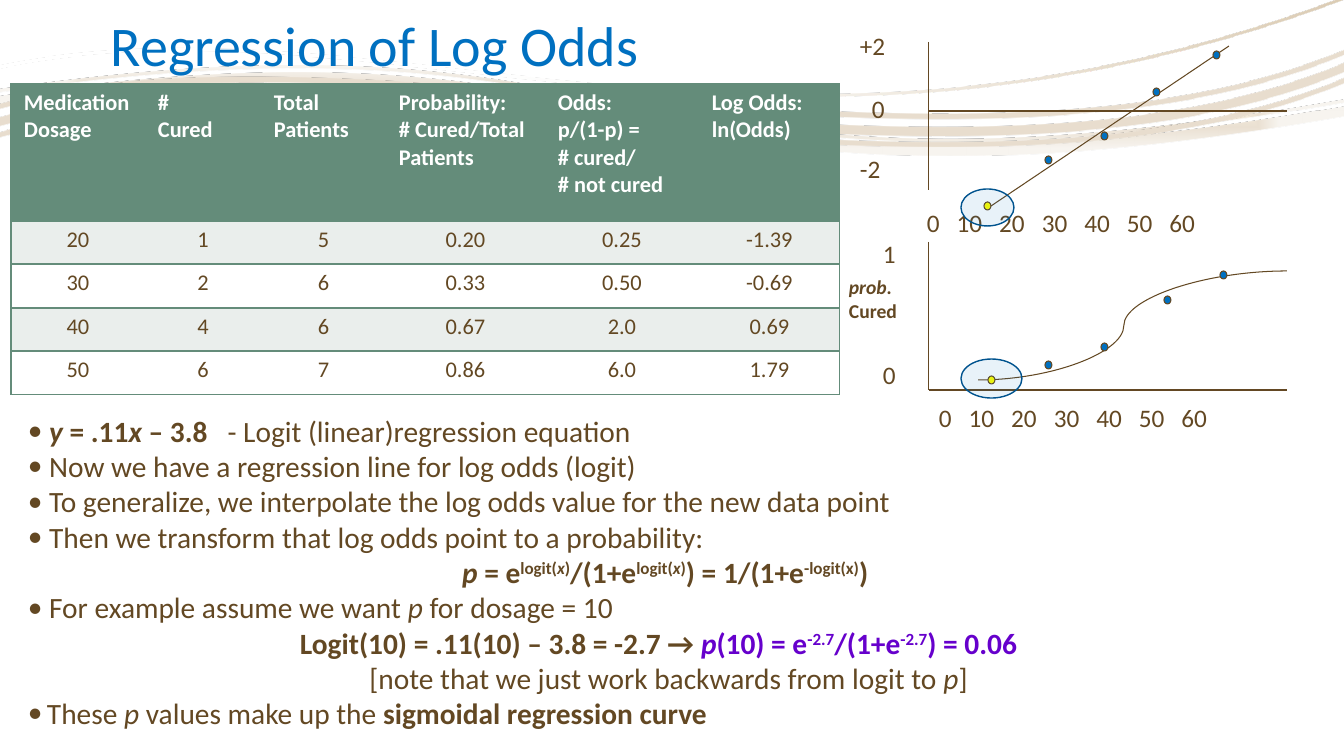
import math
import lxml.etree
import pptx
import pptx.dml.color
import pptx.enum.shapes
import pptx.enum.text
import pptx.oxml
import pptx.oxml.ns
import pptx.util

PX = 9072
BROWN, BLUE, GREEN, WHITE = "634823", "0070C0", "648C7A", "FFFFFF"
VIOLET, YELLOW, NAVY, PALE = "6600CC", "FFFF00", "00538E", "EAEEEC"
CENTER = pptx.enum.text.PP_ALIGN.CENTER
DRAWING = 'xmlns:a="http://schemas.openxmlformats.org/drawingml/2006/main"'
qn = pptx.oxml.ns.qn
rgb = pptx.dml.color.RGBColor.from_string


def write(frame, lines, size, color=BROWN, align=None):
    frame.word_wrap = True
    for number, line in enumerate(lines):
        para = frame.paragraphs[0] if number == 0 else frame.add_paragraph()
        para.alignment = align
        for text, marks in line:
            span = para.add_run()
            span.text = text
            look = {"name": "Calibri", "size": pptx.util.Pt(size),
                    "bold": "b" in marks, "italic": "i" in marks}
            for name, value in look.items():
                setattr(span.font, name, value)
            span.font.color.rgb = rgb(VIOLET if "v" in marks else color)
            if "^" in marks:
                span.font._element.set("baseline", "30000")


deck = pptx.Presentation()
deck.slide_width, deck.slide_height = 1344 * PX, 756 * PX
page = deck.slides.add_slide(deck.slide_layouts[6])
shapes = page.shapes

center_focus = '<a:path path="shape"><a:fillToRect l="50000" t="50000" r="50000" b="50000"/></a:path>'
corner_focus = '<a:path path="rect"><a:fillToRect l="100000" t="100000"/></a:path>'
waves = [
    ((1, 39, 1342, 136), [(1344, 106), (607, 235), (672, 0), (0, 96)], [(0, 10), (-7, 3)],
     [(0, "FAF1DF", 90), (18, "EAE0D2", 100), (37, "F7F4EF", 100), (100, "F7F4EF", 100)],
     center_focus),
    ((3, 15, 1346, 172), [(1344, -3), (760, 213), (376, -14), (0, 65)], [(0, 3)],
     [(36, WHITE, 30), (100, "CBB491", 100)], '<a:lin ang="2700000" scaled="0"/>'),
    ((-1, 51, 1347, 116), [(1344, 63), (963, 222), (352, 22), (0, 117)],
     [(15, 5), (0, 9), (-13, 5)],
     [(36, WHITE, 47), (100, "E8DDCE", 100)], corner_focus),
]
TILT = 3.5
cos, sin = math.cos(math.radians(TILT)), math.sin(math.radians(TILT))
for (left, top, width, height), controls, bands, stops, focus in waves:
    middle_x, middle_y = left + width / 2, top + height / 2
    builder = None
    for shift, depth in bands:
        outline = [(x, y + shift) for x, y in controls]
        outline += [(x, y + shift + depth) for x, y in reversed(controls)]
        offsets = [(x - middle_x, y - middle_y) for x, y in outline]
        turned = [((middle_x + x * cos - y * sin) * PX, (middle_y + x * sin + y * cos) * PX)
                  for x, y in offsets]
        if builder is None:
            builder = shapes.build_freeform(*turned[0])
        else:
            builder.move_to(*turned[0])
        builder.add_line_segments(turned[1:], close=True)
    wave = builder.convert_to_shape()
    wave.shadow.inherit = False
    wave.line.fill.background()
    wave.fill.background()
    route = wave._element.spPr.find(".//" + qn("a:path"))
    for point in route.iter(qn("a:pt")):
        point.set("x", str(int(point.get("x")) + wave.left - left * PX))
        point.set("y", str(int(point.get("y")) + wave.top - top * PX))
    route.set("w", str(width * PX))
    route.set("h", str(height * PX))
    segments = route.findall(qn("a:lnTo"))
    for start in range(0, len(segments), 7):
        for first in (start, start + 4):
            bend = lxml.etree.Element(qn("a:cubicBezTo"))
            segments[first].addprevious(bend)
            for segment in segments[first:first + 3]:
                bend.append(segment[0])
                route.remove(segment)
    place = {"left": left, "top": top, "width": width, "height": height}
    for name, value in place.items():
        setattr(wave, name, value * PX)
    wave.rotation = 360 - TILT
    colors = "".join(
        f'<a:gs pos="{spot * 1000}"><a:srgbClr val="{color}">'
        f'<a:alpha val="{opacity * 1000}"/></a:srgbClr></a:gs>'
        for spot, color, opacity in stops)
    blank = wave._element.spPr.find(qn("a:noFill"))
    blank.getparent().replace(blank, pptx.oxml.parse_xml(
        f'<a:gradFill {DRAWING} rotWithShape="1"><a:gsLst>{colors}</a:gsLst>{focus}</a:gradFill>'))

title = shapes.add_textbox(101 * PX, 8 * PX, 1142 * PX, 76 * PX)
title.text_frame.vertical_anchor = pptx.enum.text.MSO_ANCHOR.BOTTOM
write(title.text_frame, [[("Regression of Log Odds", "")]], 40, BLUE)
title.text_frame.paragraphs[0].line_spacing = 0.9

rows = [
    ["Medication Dosage", "#\nCured", "Total\nPatients", "Probability:\n# Cured/Total Patients",
     "Odds:\np/(1-p) =\n# cured/\n# not cured", "Log Odds:\nln(Odds)"],
    ["20", "1", "5", "0.20", "0.25", "-1.39"],
    ["30", "2", "6", "0.33", "0.50", "-0.69"],
    ["40", "4", "6", "0.67", "2.0", "0.69"],
    ["50", "6", "7", "0.86", "6.0", "1.79"],
]
widths = [134, 116, 125, 159, 154, 141]
heights = [137, 43, 44, 43, 44]
holder = shapes.add_table(len(rows), len(widths), 11 * PX, 84 * PX,
                          sum(widths) * PX, sum(heights) * PX)
table = holder.table
table._tbl.tblPr.find(qn("a:tableStyleId")).text = "{2D5ABB26-0587-4C30-8999-92F81FD0307C}"
for column, width in zip(table.columns, widths):
    column.width = width * PX
for r, row in enumerate(rows):
    header = r == 0
    table.rows[r].height = heights[r] * PX
    for c, text in enumerate(row):
        cell = table.cell(r, c)
        margins = {"margin_left": 13, "margin_right": 13, "margin_top": 5, "margin_bottom": 5}
        for name, value in margins.items():
            setattr(cell, name, value * PX)
        sides = "L" * (c == 0) + "R" * (c == len(widths) - 1) + "TB"
        for side in sides:
            cell._tc.get_or_add_tcPr().append(pptx.oxml.parse_xml(
                f'<a:ln{side} {DRAWING} w="12700"><a:solidFill><a:srgbClr val="{GREEN}"/>'
                f"</a:solidFill></a:ln{side}>"))
        cell.fill.solid()
        cell.fill.fore_color.rgb = rgb(GREEN if header else PALE if r % 2 else WHITE)
        write(cell.text_frame, [[(line, "b" if header else "")] for line in text.split("\n")],
              16, WHITE if header else BROWN, None if header else CENTER)

body = shapes.add_shape(pptx.enum.shapes.MSO_SHAPE.RECTANGLE,
                        18 * PX, 408 * PX, 1301 * PX, 331 * PX)
body.shadow.inherit = False
body.fill.solid()
body.fill.fore_color.rgb = rgb(WHITE)
body.line.fill.background()
body.text_frame.vertical_anchor = pptx.enum.text.MSO_ANCHOR.TOP
body_lines = [
    ("•", 0, 0, [(" ", "bi"), ("y", "bi"), (" = .11", "b"), ("x", "bi"), (" – 3.8   ", "b"),
                 ("- Logit (linear)regression equation", "")]),
    ("•", 0, 0, [(" Now we have a regression line for log odds (logit)", "")]),
    ("•", 0, 0, [(" To generalize, we interpolate the log odds value for the new data point", "")]),
    ("•", 0, 0, [(" Then we transform that log odds point to a probability:", "")]),
    ("", 0, 0, [("p ", "bi"), ("= e", "b"), ("logit(", "b^"), ("x", "bi^"), (")", "b^"),
                ("/(1+e", "b"), ("logit(", "b^"), ("x", "bi^"), (")", "b^"),
                (") = 1/(1+e", "b"), ("-logit(x)", "b^"), (") ", "b")]),
    ("•", 0, 0, [(" For example assume we want ", ""), ("p", "i"), (" for dosage = 10", "")]),
    ("", 0, 20, [("Logit(10) = .11(10) – 3.8 = -2.7 → ", "b"), ("p", "biv"), ("(10) = e", "bv"),
                 ("-2.7", "bv^"), ("/(1+e", "bv"), ("-2.7", "bv^"), (") = 0.06", "bv")]),
    ("", 0, 0, [("[note that we just work backwards from logit to ", ""), ("p", "i"), ("]", "")]),
    ("•", 19, 0, [("These ", ""), ("p", "i"), (" values make up the ", ""),
                  ("sigmoidal regression curve", "b")]),
]
write(body.text_frame, [line for *_, line in body_lines], 21)
for para, (bullet, hang, right, _) in zip(body.text_frame.paragraphs, body_lines):
    para.alignment = pptx.enum.text.PP_ALIGN.LEFT if bullet else CENTER
    layout = para._p.get_or_add_pPr()
    for name, value in {"marL": hang, "marR": right, "indent": -hang}.items():
        layout.set(name, str(value * PX))
    if bullet:
        lxml.etree.SubElement(layout, qn("a:buFont")).set("typeface", "Calibri")
        lxml.etree.SubElement(layout, qn("a:buChar")).set("char", bullet)

dosages = "0   10   20   30   40   50   60"
labels = [
    (917, 202, 415, 18, [(dosages, "")]), (929, 397, 415, 18, [(dosages, "")]),
    (850, 25, 68, 18, [("+2", "")]), (850, 148, 68, 18, [("-2", "")]),
    (862, 88, 44, 18, [("0", "")]), (873, 354, 44, 18, [("0", "")]),
    (873, 233, 44, 18, [("1", "")]),
    (839, 270, 112, 14, [("prob.", "bi"), ("Cured", "b")]),
]
for x, y, width, size, words in labels:
    box = shapes.add_textbox(x * PX, y * PX, width * PX, (57 if size == 14 else 44) * PX)
    write(box.text_frame, [[word] for word in words], size)

STRAIGHT = pptx.enum.shapes.MSO_CONNECTOR.STRAIGHT
CURVE = pptx.enum.shapes.MSO_CONNECTOR.CURVE
plot_lines = [
    (STRAIGHT, 929, 42, 929, 190), (STRAIGHT, 929, 111, 1287, 111),
    (STRAIGHT, 1229, 46, 991, 206), (STRAIGHT, 929, 242, 929, 390),
    (STRAIGHT, 929, 390, 1287, 390), (CURVE, 978, 380, 1287, 271),
]
for kind, *ends in plot_lines:
    line = shapes.add_connector(kind, *[end * PX for end in ends])
    line.line.color.rgb = rgb(BROWN)
    line.line.width = pptx.util.Pt(0.75)
    lxml.etree.SubElement(line._element.spPr, qn("a:effectLst"))
    if kind == CURVE:
        guide = lxml.etree.SubElement(line._element.spPr.find(".//" + qn("a:avLst")), qn("a:gd"))
        guide.set("name", "adj1")
        guide.set("fmla", "val 47200")

observed = [(1153, 88), (1045, 156), (1213, 51), (1101, 132),
            (1164, 296), (1045, 361), (1220, 271), (1101, 343)]
predicted = [(984, 202), (988, 376)]
ovals = [(x, y, 7, 8, BLUE, BROWN, 0.75) for x, y in observed]
ovals += [(x, y, 7, 8, YELLOW, BROWN, 0.75) for x, y in predicted]
ovals += [(961, 189, 53, 37, BLUE, NAVY, 1), (961, 359, 61, 39, BLUE, NAVY, 1)]
for x, y, width, height, fill, edge, weight in ovals:
    oval = shapes.add_shape(pptx.enum.shapes.MSO_SHAPE.OVAL,
                            x * PX, y * PX, width * PX, height * PX)
    oval.shadow.inherit = False
    oval.fill.solid()
    oval.fill.fore_color.rgb = rgb(fill)
    oval.line.color.rgb = rgb(edge)
    oval.line.width = pptx.util.Pt(weight)
    if edge == NAVY:
        tint = oval._element.spPr.find(qn("a:solidFill")).find(qn("a:srgbClr"))
        lxml.etree.SubElement(tint, qn("a:alpha")).set("val", "9000")

deck.save("out.pptx")
